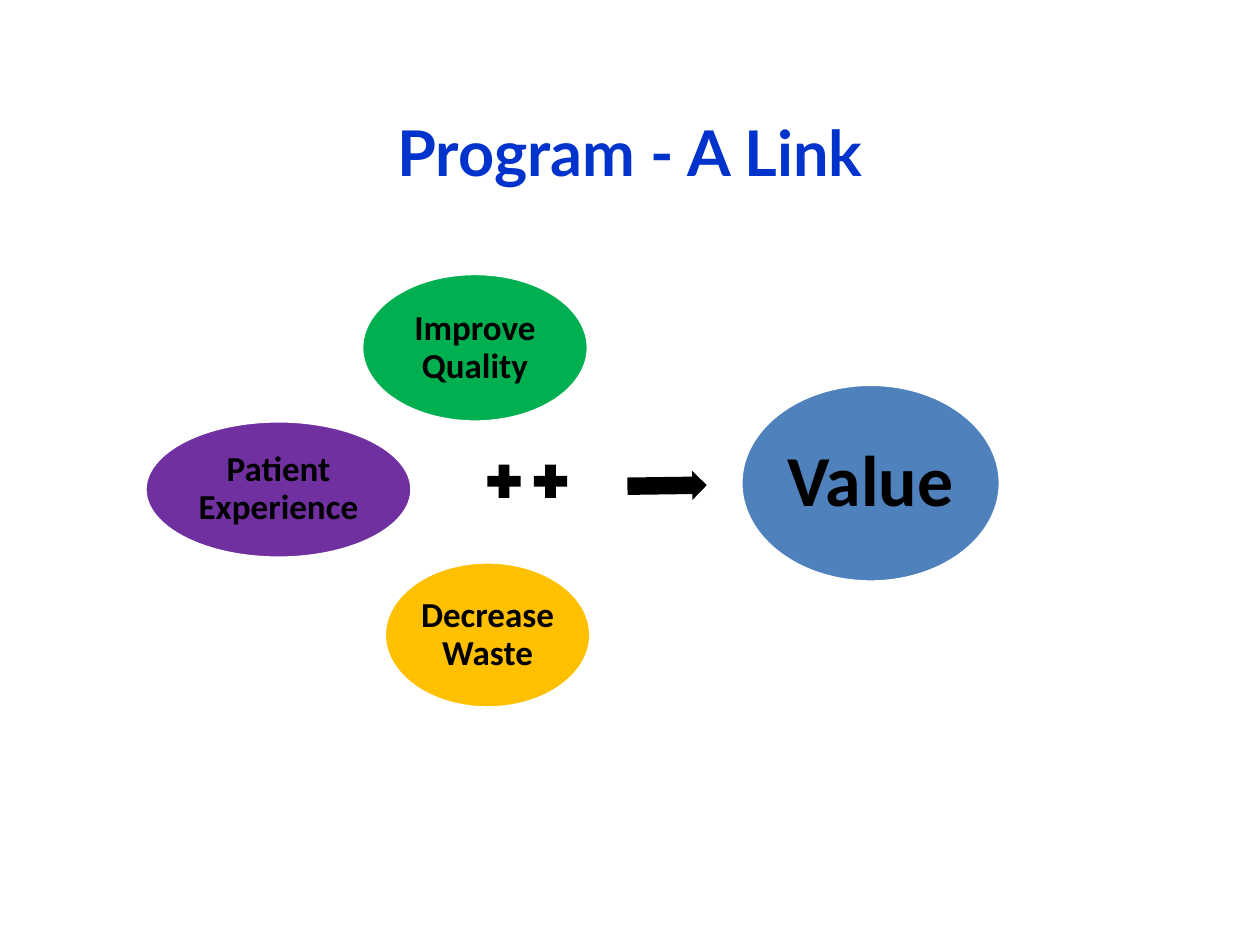
import pptx
import pptx.dml.color
import pptx.enum.shapes
import pptx.enum.text
import pptx.util
from pptx.util import Inches

SHAPE = pptx.enum.shapes.MSO_SHAPE
BLACK = "000000"

TITLE = "Program - A Link"
# text, left, top, width, height, fill, text size
OVALS = [
    ("Patient Experience", 1.15, 3.34, 2.12, 1.09, "7030A0", 20),
    ("Decrease Waste", 3.05, 4.46, 1.64, 1.16, "FFC000", 20),
    ("Improve Quality", 2.87, 2.17, 1.8, 1.18, "00B050", 20),
    ("Value", 5.88, 3.05, 2.06, 1.57, "4F81BD", 41),
]
PLUS_LEFTS = [3.82, 4.19]
PLUS_TOP, PLUS_SIZE = 3.64, 0.36
ARROW = (4.98, 3.74, 0.63, 0.23)


def color(value):
    return pptx.dml.color.RGBColor.from_string(value)


def write(shape, text, *, size, font="Calibri", fill=BLACK, inset=0.03, spacing=0.9):
    frame = shape.text_frame
    frame.word_wrap = True
    frame.auto_size = pptx.enum.text.MSO_AUTO_SIZE.NONE
    frame.vertical_anchor = pptx.enum.text.MSO_ANCHOR.MIDDLE
    frame.margin_left = frame.margin_right = Inches(inset)
    frame.margin_top = frame.margin_bottom = Inches(inset)
    para = frame.paragraphs[0]
    para.alignment = pptx.enum.text.PP_ALIGN.CENTER
    para.line_spacing = spacing
    span = para.add_run()
    span.text = text
    span.font.name = font
    span.font.size = pptx.util.Pt(size)
    span.font.bold = True
    span.font.color.rgb = color(fill)


def add_shape(page, kind, place, fill, line=None):
    shape = page.shapes.add_shape(kind, *map(Inches, place))
    shape.shadow.inherit = False
    shape.fill.solid()
    shape.fill.fore_color.rgb = color(fill)
    if line:
        shape.line.color.rgb = color(line)
        shape.line.width = pptx.util.Pt(2)
    else:
        shape.line.fill.background()
    return shape


def main():
    deck = pptx.Presentation()
    deck.slide_width, deck.slide_height = Inches(10), Inches(7.5)
    page = deck.slides.add_slide(deck.slide_layouts[5])

    title = page.shapes.title
    title.left, title.top = Inches(0.5), Inches(0.58)
    title.width, title.height = Inches(9), Inches(1.25)
    write(title, TITLE, size=36, font="Lato", fill="0033CC", inset=0.05, spacing=1.0)

    for text, left, top, width, height, fill, size in OVALS:
        oval = add_shape(page, SHAPE.OVAL, (left, top, width, height), fill, line="FFFFFF")
        write(oval, text, size=size)

    for left in PLUS_LEFTS:
        add_shape(page, SHAPE.MATH_PLUS, (left, PLUS_TOP, PLUS_SIZE, PLUS_SIZE), BLACK)

    arrow = add_shape(page, SHAPE.RIGHT_ARROW, ARROW, BLACK)
    arrow.adjustments[0] = 0.6
    arrow.adjustments[1] = 0.5
    arrow.rotation = 359.2

    deck.save("out.pptx")


if __name__ == "__main__":
    main()
